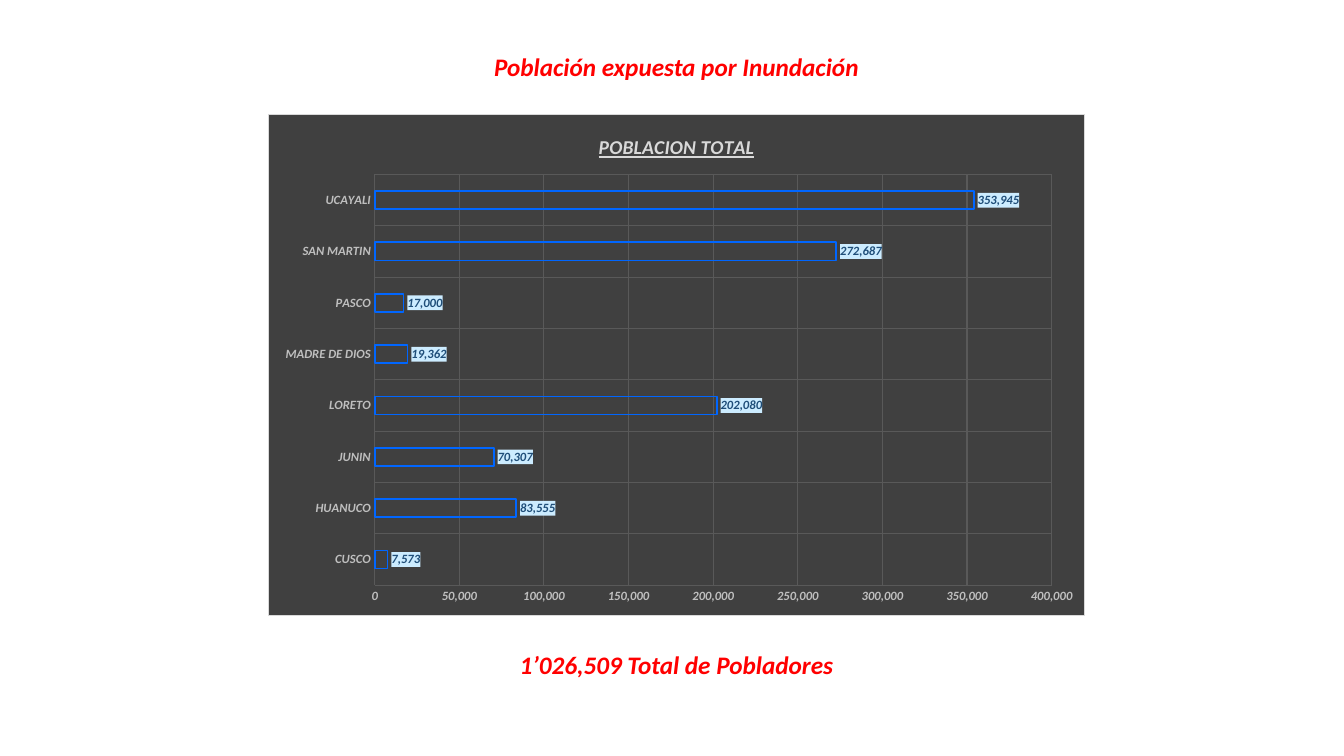
"""Build the slide on population exposed to flooding."""
from lxml.etree import fromstring
from pptx import Presentation
from pptx.chart.data import CategoryChartData
from pptx.dml.color import RGBColor
from pptx.enum.chart import XL_CHART_TYPE as ChartType, XL_LABEL_POSITION as LabelPosition
from pptx.enum.chart import XL_TICK_MARK as TickMark
from pptx.enum.text import MSO_ANCHOR as Anchor, PP_ALIGN as Align
from pptx.oxml.ns import qn
from pptx.util import Inches, Pt

HEADING = "Población expuesta por Inundación"
TOTAL = "1’026,509 Total de Pobladores"
CHART_TITLE = "POBLACION TOTAL"
POPULATION = {
    "CUSCO": 7573,
    "HUANUCO": 83555,
    "JUNIN": 70307,
    "LORETO": 202080,
    "MADRE DE DIOS": 19362,
    "PASCO": 17000,
    "SAN MARTIN": 272687,
    "UCAYALI": 353945,
}
HEADING_BOX = (4.78, 0.46, 3.86, 0.4)
TOTAL_BOX = (5.03, 6.39, 3.36, 0.4)
CHART_BOX = (2.66, 1.13, 8.1, 4.98)
PLOT_LAYOUT = {"x": 0.13, "y": 0.12, "w": 0.83, "h": 0.82}
THEME = {
    "font": "Calibri", "heading": "FF0000", "panel": "404040", "border": "D9D9D9",
    "grid": "595959", "axis": "BFBFBF", "bar": "0066FF", "label": "1F4E79",
    "label_fill": "CCECFF", "heading_size": 18, "title_size": 14, "small_size": 9,
}
NAMESPACES = ('xmlns:c="http://schemas.openxmlformats.org/drawingml/2006/chart" '
              'xmlns:a="http://schemas.openxmlformats.org/drawingml/2006/main"')


def set_all(target, **values):
    for name, value in values.items():
        setattr(target, name, value)


def format_font(font, size, color, **extra):
    set_all(font, name=THEME["font"], size=Pt(THEME[size]), bold=True, italic=True, **extra)
    font.color.rgb = RGBColor.from_string(THEME[color])


def format_line(line, color, width):
    line.color.rgb = RGBColor.from_string(THEME[color])
    line.width = Pt(width)


def write_caption(shape, box, text):
    left, top, width, height = map(Inches, box)
    set_all(shape, left=left, top=top, width=width, height=height)
    frame = shape.text_frame
    set_all(frame, text=text, word_wrap=False, vertical_anchor=Anchor.MIDDLE)
    paragraph = frame.paragraphs[0]
    paragraph.alignment = Align.CENTER
    format_font(paragraph.runs[0].font, "heading_size", "heading")


def area_format(fill, border=None):
    line = ""
    if border:
        line = f'<a:ln w="9525"><a:solidFill><a:srgbClr val="{THEME[border]}"/></a:solidFill></a:ln>'
    return fromstring(f'<c:spPr {NAMESPACES}><a:solidFill><a:srgbClr val="{THEME[fill]}"/>'
                      f'</a:solidFill>{line}</c:spPr>')


def place_plot(chart):
    plot_area = chart.element.find(f".//{qn('c:plotArea')}")
    for layout in plot_area.findall(qn("c:layout")):
        plot_area.remove(layout)
    sizes = "".join(f'<c:{name} val="{value}"/>' for name, value in PLOT_LAYOUT.items())
    plot_area.insert(0, fromstring(
        f'<c:layout {NAMESPACES}><c:manualLayout><c:layoutTarget val="inner"/>'
        f'<c:xMode val="edge"/><c:yMode val="edge"/>{sizes}</c:manualLayout></c:layout>'))


def format_axis(axis):
    set_all(axis, major_tick_mark=TickMark.NONE, minor_tick_mark=TickMark.NONE,
            has_major_gridlines=True)
    axis.format.line.fill.background()
    format_line(axis.major_gridlines.format.line, "grid", 0.75)
    format_font(axis.tick_labels.font, "small_size", "axis")


def format_bars(chart):
    plot = chart.plots[0]
    set_all(plot, gap_width=182, overlap=-50, vary_by_categories=False, has_data_labels=True)
    bars = plot.series[0]
    bars.format.fill.background()
    format_line(bars.format.line, "bar", 1.25)
    labels = plot.data_labels
    set_all(labels, show_value=True, number_format="#,##0", number_format_is_linked=False,
            position=LabelPosition.OUTSIDE_END)
    format_font(labels.font, "small_size", "label")
    label_number = chart.element.find(f".//{qn('c:dLbls')}/{qn('c:numFmt')}")
    label_number.addnext(area_format("label_fill"))


def add_population_chart(slide):
    data = CategoryChartData(number_format="#,##0")
    data.categories = list(POPULATION)
    data.add_series("Series 1", list(POPULATION.values()))
    chart = slide.shapes.add_chart(ChartType.BAR_CLUSTERED, *map(Inches, CHART_BOX), data).chart
    set_all(chart, has_legend=False, has_title=True)
    set_all(chart.font, name=THEME["font"], size=Pt(10))
    title = chart.chart_title
    title.include_in_layout = False
    title.text_frame.text = CHART_TITLE
    format_font(title.text_frame.paragraphs[0].runs[0].font, "title_size", "border", underline=True)
    chart.element.find(qn("c:chart")).addnext(area_format("panel", "border"))
    place_plot(chart)
    for axis in (chart.category_axis, chart.value_axis):
        format_axis(axis)
    set_all(chart.value_axis, minimum_scale=0, maximum_scale=400000, major_unit=50000)
    set_all(chart.value_axis.tick_labels, number_format="#,##0", number_format_is_linked=False)
    format_bars(chart)


def main():
    presentation = Presentation()
    set_all(presentation, slide_width=Inches(13.33), slide_height=Inches(7.5))
    slide = presentation.slides.add_slide(presentation.slide_layouts[5])
    write_caption(slide.shapes.title, HEADING_BOX, HEADING)
    write_caption(slide.shapes.add_textbox(0, 0, 0, 0), TOTAL_BOX, TOTAL)
    add_population_chart(slide)
    presentation.save("out.pptx")


if __name__ == "__main__":
    main()
